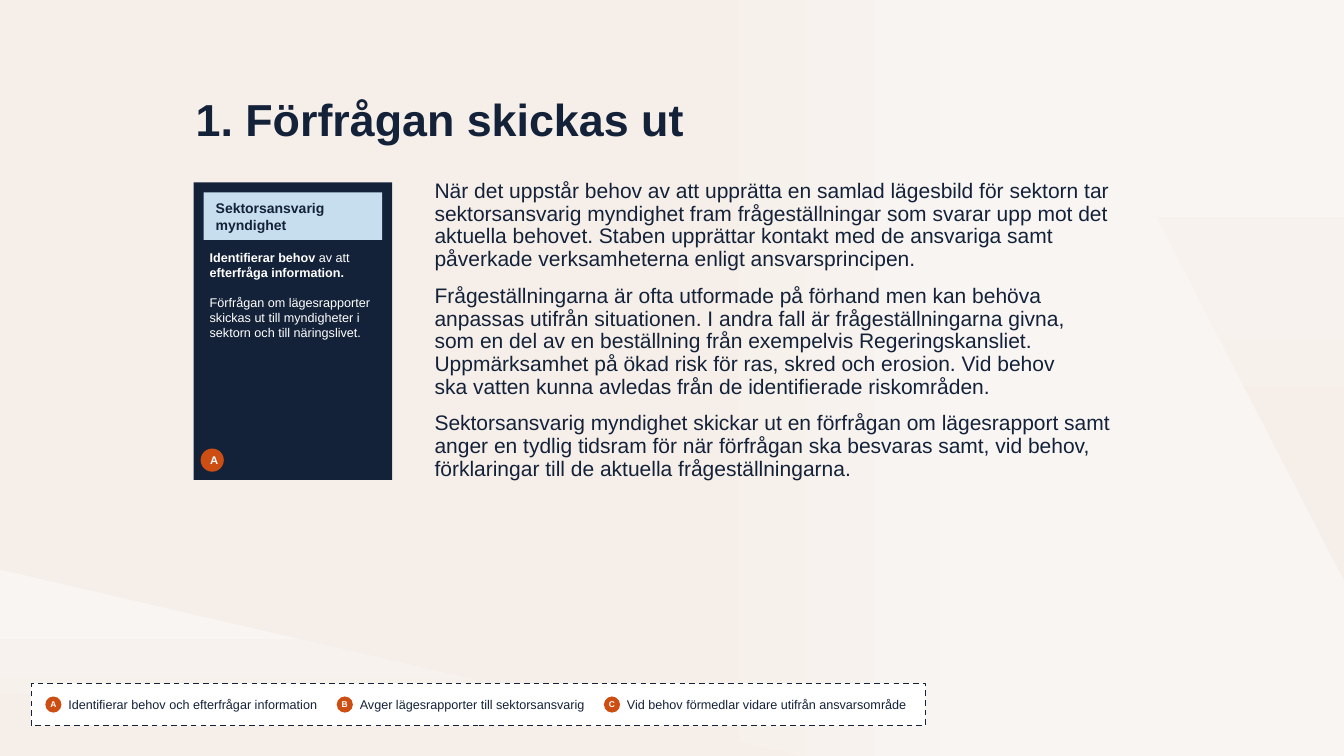
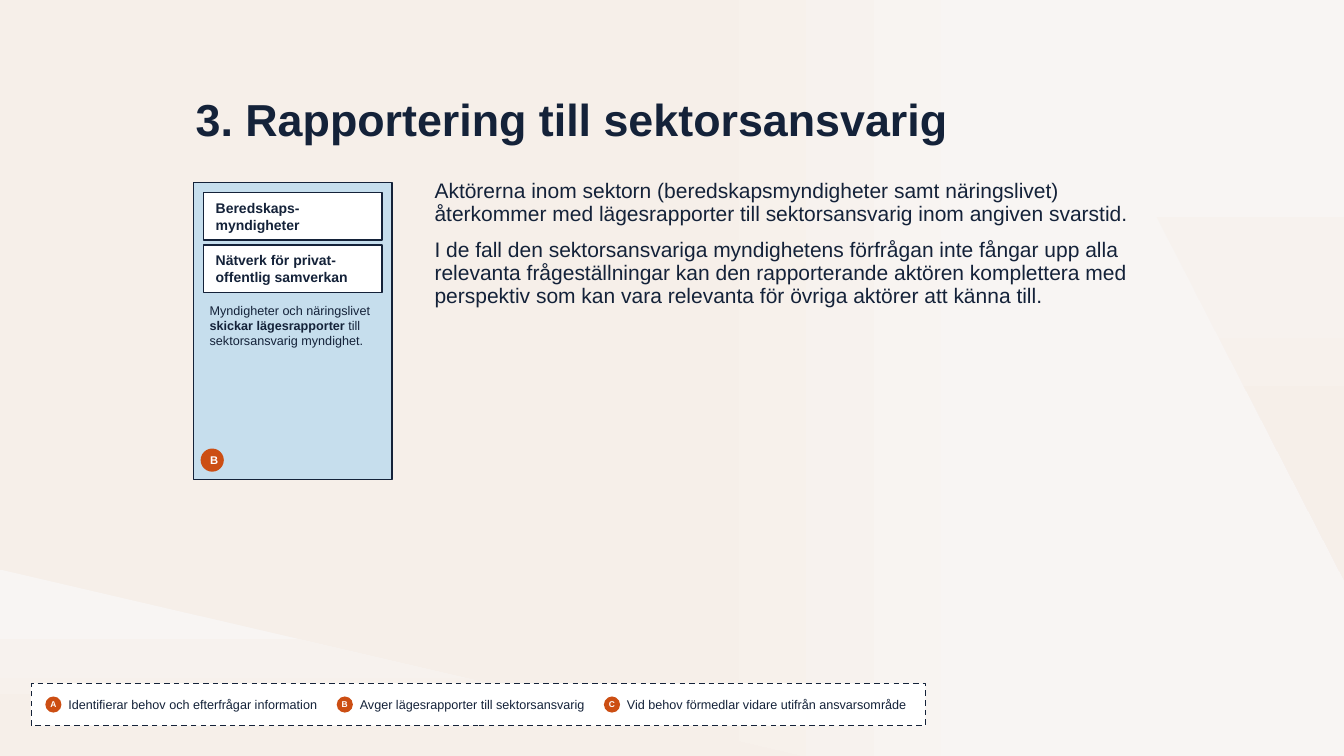
from lxml import etree
from pptx import Presentation
from pptx.dml.color import RGBColor
from pptx.enum.dml import MSO_LINE
from pptx.enum.shapes import MSO_SHAPE
from pptx.enum.text import MSO_ANCHOR, MSO_AUTO_SIZE, PP_ALIGN
from pptx.oxml import parse_xml
from pptx.oxml.ns import qn
from pptx.util import Inches, Pt

NAVY = RGBColor(0x14, 0x22, 0x39)
SKY = RGBColor(0xC6, 0xDE, 0xED)
RUST = RGBColor(0xCC, 0x4E, 0x13)
WHITE = RGBColor(0xFF, 0xFF, 0xFF)
SAND = RGBColor(0xF6, 0xEF, 0xE9)
SHELL = RGBColor(0xF7, 0xF2, 0xEE)
CREAM = RGBColor(0xF8, 0xF5, 0xF3)
FONT = "Arial"
A_NS = "http://schemas.openxmlformats.org/drawingml/2006/main"

WIDTH, HEIGHT = 13.33, 7.5
TITLE_BOX = (1.84, 0.92, 9.34, 0.59)
BODY_BOX = (4.21, 1.74, 7.1, 4.29)
CARD_BOX = (1.92, 1.81, 1.97, 2.95)
LABEL_SIZE = (1.77, 0.47)
LABEL_STEP = 0.52
LEGEND_BOX = (0.31, 6.78, 8.87, 0.42)

FADE = [(0, CREAM), (25, CREAM), (50, SHELL), (75, SAND), (100, SAND)]
BACKDROP = [
    ([(0, 0), (WIDTH, 0), (WIDTH, HEIGHT), (0, HEIGHT)],
     [(0, SAND), (50, SAND), (75, CREAM), (100, CREAM)], 0),
    ([(0, 5.65), (7.94, HEIGHT), (0, HEIGHT)], FADE, 90),
    ([(10.36, 0), (WIDTH, 5.75), (WIDTH, 0)], FADE, 90),
]

LEGEND = [
    ("A", "Identifierar behov och efterfrågar information", 0.45, 2.69),
    ("B", "Avger lägesrapporter till sektorsansvarig", 3.34, 2.59),
    ("C", "Vid behov förmedlar vidare utifrån ansvarsområde", 5.99, 3.06),
]

SLIDES = [
    {
        "title": "1. Förfrågan skickas ut",
        "body": [
            "När det uppstår behov av att upprätta en samlad lägesbild för sektorn tar "
            "sektorsansvarig myndighet fram frågeställningar som svarar upp mot det "
            "aktuella behovet. Staben upprättar kontakt med de ansvariga samt "
            "påverkade verksamheterna enligt ansvarsprincipen.",
            "Frågeställningarna är ofta utformade på förhand men kan behöva anpassas "
            "utifrån situationen. I andra fall är frågeställningarna givna,\n"
            "som en del av en beställning från exempelvis Regeringskansliet. "
            "Uppmärksamhet på ökad risk för ras, skred och erosion. Vid behov\n"
            "ska vatten kunna avledas från de identifierade riskområden.",
            "Sektorsansvarig myndighet skickar ut en förfrågan om lägesrapport samt "
            "anger en tydlig tidsram för när förfrågan ska besvaras samt, vid behov, "
            "förklaringar till de aktuella frågeställningarna.",
        ],
        "card": {"fill": NAVY, "line": None, "text": WHITE, "label": SKY},
        "labels": ["Sektorsansvarig\nmyndighet"],
        "notes": [
            [("Identifierar behov ", True), ("av att ", False),
             ("efterfråga information.", True)],
            [("Förfrågan om lägesrapporter skickas ut till myndigheter i sektorn "
              "och till näringslivet.", False)],
        ],
        "badge": "A",
    },
    {
        "title": "3. Rapportering till sektorsansvarig",
        "body": [
            "Aktörerna inom sektorn (beredskapsmyndigheter samt näringslivet) "
            "återkommer med lägesrapporter till sektorsansvarig inom angiven svarstid.",
            "I de fall den sektorsansvariga myndighetens förfrågan inte fångar upp alla "
            "relevanta frågeställningar kan den rapporterande aktören komplettera med "
            "perspektiv som kan vara relevanta för övriga aktörer att känna till.",
        ],
        "card": {"fill": SKY, "line": NAVY, "text": NAVY, "label": WHITE},
        "labels": ["Beredskaps-myndigheter", "Nätverk för privat-offentlig samverkan"],
        "notes": [
            [("Myndigheter och näringslivet ", False), ("skickar lägesrapporter ", True),
             ("till sektorsansvarig myndighet.", False)],
        ],
        "badge": "B",
    },
]


def inches(box):
    return [Inches(v) for v in box]


def write(tf, paragraphs, size, color, align=PP_ALIGN.LEFT, gap=0, spacing=None,
          anchor=MSO_ANCHOR.TOP, insets=None, plain=False):
    tf.word_wrap = True
    tf.auto_size = MSO_AUTO_SIZE.NONE
    tf.vertical_anchor = anchor
    if insets:
        for side, value in zip(("left", "top", "right", "bottom"), insets):
            setattr(tf, f"margin_{side}", Inches(value))
    for i, runs in enumerate(paragraphs):
        p = tf.add_paragraph() if i else tf.paragraphs[0]
        if plain:
            pPr = p._p.get_or_add_pPr()
            pPr.set("marL", "0")
            pPr.set("indent", "0")
            etree.SubElement(pPr, qn("a:buNone"))
        layout = {"alignment": align, "space_before": Pt(gap if i else 0),
                  "space_after": Pt(0), "line_spacing": spacing}
        for name, value in layout.items():
            setattr(p, name, value)
        for text, bold in runs:
            for n, line in enumerate(text.split("\n")):
                if n:
                    p.add_line_break()
                r = p.add_run()
                r.text = line
                r.font.color.rgb = color
                for name, value in {"name": FONT, "size": Pt(size), "bold": bold}.items():
                    setattr(r.font, name, value)


def add_box(shapes, kind, box, fill, line=None):
    sp = shapes.add_shape(kind, *inches(box))
    sp.shadow.inherit = False
    sp.fill.solid()
    sp.fill.fore_color.rgb = fill
    if line is None:
        sp.line.fill.background()
    else:
        sp.line.color.rgb = line
        sp.line.width = Pt(1)
    return sp


def add_badge(shapes, letter, left, top, side, size, nudge=0):
    sp = add_box(shapes, MSO_SHAPE.OVAL, (left, top, side, side), RUST)
    write(sp.text_frame, [[(letter, True)]], size, WHITE, PP_ALIGN.CENTER,
          anchor=MSO_ANCHOR.MIDDLE, insets=(nudge, 0, 0, 0))


def set_gradient(sp, stops, angle):
    sp.fill.background()
    gs = "".join(f'<a:gs pos="{pos * 1000}"><a:srgbClr val="{color}"/></a:gs>'
                 for pos, color in stops)
    grad = parse_xml(f'<a:gradFill xmlns:a="{A_NS}" rotWithShape="1"><a:gsLst>{gs}</a:gsLst>'
                     f'<a:lin ang="{angle * 60000}" scaled="0"/></a:gradFill>')
    spPr = sp.element.spPr
    spPr.replace(spPr.find(qn("a:noFill")), grad)


def add_backdrop(slide, layout):
    for i, (points, stops, angle) in enumerate(BACKDROP):
        start, *rest = [tuple(inches(pt)) for pt in points]
        builder = slide.shapes.build_freeform(*start)
        builder.add_line_segments(rest, close=True)
        sp = builder.convert_to_shape()
        sp.shadow.inherit = False
        sp.line.fill.background()
        set_gradient(sp, stops, angle)
        sp.element.nvSpPr.cNvPr.set("id", str(101 + i))
        layout.shapes.element.insert(2 + i, sp.element)


def place_placeholders(layout):
    for ph, box in zip(list(layout.placeholders)[:2], (TITLE_BOX, BODY_BOX)):
        for name, value in zip(("left", "top", "width", "height"), inches(box)):
            setattr(ph, name, value)


def add_card(slide, content):
    look = content["card"]
    shapes = slide.shapes.add_group_shape().shapes
    left, top = CARD_BOX[:2]
    sp = add_box(shapes, MSO_SHAPE.RECTANGLE, CARD_BOX, look["fill"], look["line"])
    inset_top = 0.67 + LABEL_STEP * (len(content["labels"]) - 1)
    write(sp.text_frame, content["notes"], 9, look["text"], gap=10.4,
          insets=(0.16, inset_top, 0.08, 0.16))
    for i, label in enumerate(content["labels"]):
        box = (left + 0.1, top + 0.1 + i * LABEL_STEP, *LABEL_SIZE)
        sp = add_box(shapes, MSO_SHAPE.RECTANGLE, box, look["label"], look["line"])
        write(sp.text_frame, [[(label, True)]], 10, NAVY,
              anchor=MSO_ANCHOR.MIDDLE, insets=(0.12, 0, 0.08, 0))
    add_badge(shapes, content["badge"], left + 0.07, top + 2.64, 0.23, 8, nudge=0.04)


def add_legend(slide):
    shapes = slide.shapes.add_group_shape().shapes
    frame = add_box(shapes, MSO_SHAPE.RECTANGLE, LEGEND_BOX, WHITE, NAVY)
    frame.line.dash_style = MSO_LINE.DASH
    top = LEGEND_BOX[1]
    for letter, text, left, width in LEGEND:
        add_badge(shapes, letter, left, top + 0.13, 0.16, 6)
        tb = shapes.add_textbox(*inches((left + 0.13, top + 0.08, width, 0.25)))
        write(tb.text_frame, [[(text, False)]], 9, NAVY)


def main():
    prs = Presentation()
    prs.slide_width, prs.slide_height = inches((WIDTH, HEIGHT))
    layout = prs.slide_layouts[1]
    place_placeholders(layout)
    for i, content in enumerate(SLIDES):
        s = prs.slides.add_slide(layout)
        if i == 0:
            add_backdrop(s, layout)
        write(s.shapes.title.text_frame, [[(content["title"], True)]], 32, NAVY,
              spacing=0.9, anchor=MSO_ANCHOR.MIDDLE)
        write(s.placeholders[1].text_frame, [[(text, False)] for text in content["body"]],
              15, NAVY, gap=10, spacing=0.9, plain=True)
        add_card(s, content)
        add_legend(s)
    prs.save("out.pptx")


if __name__ == "__main__":
    main()
